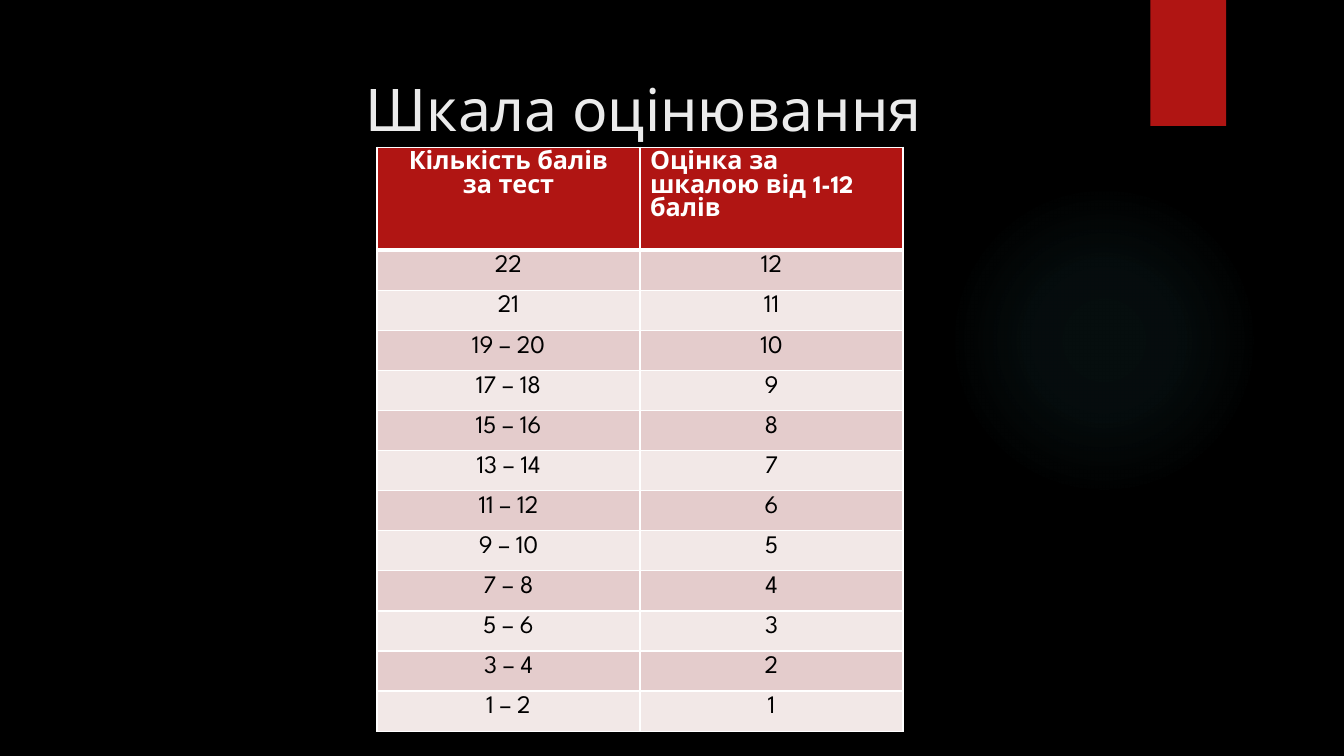
from lxml.etree import SubElement
from pptx import Presentation
from pptx.dml.color import RGBColor
from pptx.enum.shapes import MSO_SHAPE as Shape
from pptx.enum.text import MSO_ANCHOR as Anchor, MSO_AUTO_SIZE as AutoSize, PP_ALIGN as Align
from pptx.oxml import parse_xml
from pptx.oxml.ns import nsdecls, qn
from pptx.util import Pt

COLORS = {
    "background": "000000",
    "accent": "B01513",
    "glow": "50B9C1",
    "title": "EBEBEB",
    "white": "FFFFFF",
    "black": "000000",
    "dark_band": "E4CCCC",
    "light_band": "F2E8E7",
}
FONT = "League Spartan"
HEADER = (["Кількість балів", "за тест"], ["Оцінка за шкалою від 1-12 балів"])
SCORES = ["22", "21", "19 – 20", "17 – 18", "15 – 16", "13 – 14",
          "11 – 12", "9 – 10", "7 – 8", "5 – 6", "3 – 4", "1 – 2"]


def add_run(paragraph, text, size, color, bold=False):
    run = paragraph.add_run()
    run.text = text
    run.font.name = FONT
    run.font.size = Pt(size)
    run.font.bold = bold
    run.font.color.rgb = RGBColor.from_string(COLORS[color])


def fill_cell(cell, lines, align, text_color, fill_color, header=False):
    properties = cell._tc.get_or_add_tcPr()
    for side in "LRTB":
        thick = (header and side == "B") or (first_band and side == "T")
        border = SubElement(properties, qn(f"a:ln{side}"), w=str(Pt(3 if thick else 1)))
        border_fill = SubElement(border, qn("a:solidFill"))
        SubElement(border_fill, qn("a:srgbClr"), val=COLORS["white"])
    cell.fill.solid()
    cell.fill.fore_color.rgb = RGBColor.from_string(COLORS[fill_color])
    for index, line in enumerate(lines):
        frame = cell.text_frame
        paragraph = frame.add_paragraph() if index else frame.paragraphs[0]
        paragraph.alignment = align
        add_run(paragraph, line, 18, text_color, header)


presentation = Presentation()
presentation.slide_width = Pt(960)
presentation.slide_height = Pt(540)
slide = presentation.slides.add_slide(presentation.slide_layouts[5])
slide.background.fill.solid()
slide.background.fill.fore_color.rgb = RGBColor.from_string(COLORS["background"])

glow = slide.shapes.add_shape(Shape.OVAL, Pt(677.5), Pt(131.8), Pt(221.8), Pt(221.8))
glow.shadow.inherit = False
glow.line.fill.background()
glow.fill.background()
stops = "".join(
    f'<a:gs pos="{position * 1000}"><a:srgbClr val="{COLORS["glow"]}">'
    f'<a:alpha val="{opacity * 1000}"/></a:srgbClr></a:gs>'
    for position, opacity in ((0, 7), (36, 6), (69, 0))
)
gradient = parse_xml(
    f'<a:gradFill {nsdecls("a")}><a:gsLst>{stops}</a:gsLst><a:path path="circle">'
    '<a:fillToRect l="50000" t="50000" r="50000" b="50000"/></a:path></a:gradFill>'
)
glow_properties = glow._element.spPr
glow_properties.replace(glow_properties.find(qn("a:noFill")), gradient)

ribbon = slide.shapes.add_shape(Shape.RECTANGLE, Pt(821.8), Pt(0), Pt(54), Pt(90))
ribbon.shadow.inherit = False
ribbon.line.fill.background()
ribbon.fill.solid()
ribbon.fill.fore_color.rgb = RGBColor.from_string(COLORS["accent"])

title = slide.shapes.title
title.left, title.top, title.width, title.height = Pt(110.2), Pt(36.7), Pt(740.9), Pt(110.2)
title_frame = title.text_frame
title_frame.word_wrap = True
title_frame.auto_size = AutoSize.NONE
title_frame.vertical_anchor = Anchor.TOP
title_frame.margin_top = Pt(15.3)
title_paragraph = title_frame.paragraphs[0]
title_paragraph.alignment = Align.LEFT
title_paragraph._p.get_or_add_pPr().set("marL", str(Pt(144)))
add_run(title_paragraph, "Шкала оцінювання", 42, "title")

table = slide.shapes.add_table(
    len(SCORES) + 1, 2, Pt(269.3), Pt(105.1), Pt(375.8), Pt(417.4)
).table
for column in table.columns:
    column.width = Pt(187.9)
for index, row in enumerate(table.rows):
    row.height = Pt(28.65 if index else 73.6)

first_band = False
for cell, lines, align in zip(table.rows[0].cells, HEADER, (Align.CENTER, Align.LEFT)):
    fill_cell(cell, lines, align, "white", "accent", header=True)
for index, score in enumerate(SCORES):
    first_band = index == 0
    band = "light_band" if index % 2 else "dark_band"
    for cell, text in zip(table.rows[index + 1].cells, (score, str(len(SCORES) - index))):
        fill_cell(cell, [text], Align.CENTER, "black", band)

presentation.save("out.pptx")
